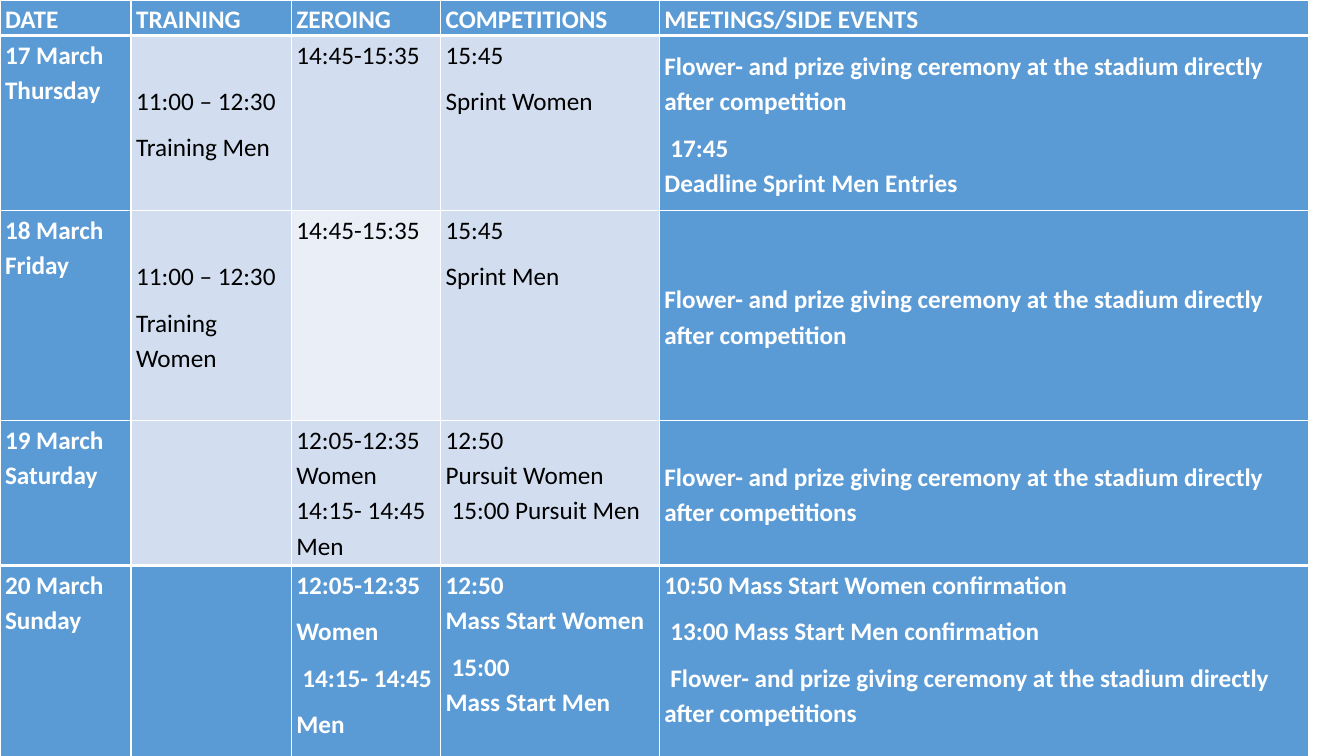
from lxml.etree import SubElement
from pptx import Presentation
from pptx.dml.color import RGBColor
from pptx.enum.text import MSO_ANCHOR
from pptx.oxml.ns import qn
from pptx.util import Inches, Pt

COLORS = {"white": "FFFFFF", "black": "000000", "blue": "5B9BD5",
          "light": "D2DEEF", "pale": "EAEFF7"}
COL_WIDTHS = [1.3, 1.59, 1.48, 2.17, 6.44]
ROW_HEIGHTS = [0.35, 1.74, 2.08, 1.44, 2.09]
CEREMONY = "Flower- and prize giving ceremony at the stadium directly after competition"

# Each cell is a list of paragraphs; a leading ">" indents the first line.
SCHEDULE = [
    [["DATE"], ["TRAINING"], ["ZEROING"], ["COMPETITIONS"], ["MEETINGS/SIDE EVENTS"]],
    [["17 March\nThursday"], ["11:00 – 12:30", "Training Men"], ["14:45-15:35"],
     ["15:45", "Sprint Women"],
     [CEREMONY, ">17:45\nDeadline Sprint Men Entries"]],
    [["18 March\nFriday"], ["11:00 – 12:30", "Training Women"], ["14:45-15:35"],
     ["15:45", "Sprint Men"], [CEREMONY]],
    [["19 March\nSaturday"], [], ["12:05-12:35", "Women", "14:15- 14:45", "Men"],
     ["12:50", "Pursuit Women", ">15:00 Pursuit Men"], [CEREMONY + "s"]],
    [["20 March\nSunday"], [], ["12:05-12:35", "Women", ">14:15- 14:45", "Men"],
     ["12:50\nMass Start Women", ">15:00\nMass Start Men"],
     ["10:50 Mass Start Women confirmation", ">13:00 Mass Start Men confirmation",
      ">" + CEREMONY + "s"]],
]
HEADER, SATURDAY, SUNDAY = 0, 3, 4
DATE, TRAINING, ZEROING, MEETINGS = 0, 1, 2, 4


def add_border(cell, side, points):
    tc_pr = cell._tc.get_or_add_tcPr()
    line = SubElement(tc_pr, qn(f"a:ln{side}"), w=str(Pt(points)))
    fill = SubElement(line, qn("a:solidFill"))
    SubElement(fill, qn("a:srgbClr"), val=COLORS["white"])


def write_paragraph(p, text, light, space_after):
    p.text = text.lstrip(">")
    p.line_spacing = 1.15
    p.space_after = Pt(space_after)
    if text.startswith(">"):
        p._p.get_or_add_pPr().set("indent", str(Inches(0.06)))
    for r in p.runs:
        r.font.name = "Calibri"
        r.font.size = Pt(18)
        r.font.bold = not light
        r.font.color.rgb = RGBColor.from_string(COLORS["black" if light else "white"])


prs = Presentation()
prs.slide_width, prs.slide_height = Inches(13.33), Inches(7.5)
s = prs.slides.add_slide(prs.slide_layouts[6])

table = s.shapes.add_table(
    len(ROW_HEIGHTS), len(COL_WIDTHS), 0, 0,
    Inches(sum(COL_WIDTHS)), Inches(sum(ROW_HEIGHTS))).table
for column, width in zip(table.columns, COL_WIDTHS):
    column.width = Inches(width)
for row, height in zip(table.rows, ROW_HEIGHTS):
    row.height = Inches(height)

for i, day in enumerate(SCHEDULE):
    for j, paragraphs in enumerate(day):
        cell = table.cell(i, j)
        light = HEADER < i < SUNDAY and DATE < j < MEETINGS
        fill = "light" if light else "blue"
        if (i, j) == (2, ZEROING):
            fill = "pale"

        add_border(cell, "L", 1)
        add_border(cell, "R", 1)
        add_border(cell, "T", 3 if i in (HEADER + 1, SUNDAY) else 1)
        add_border(cell, "B", 3 if i in (HEADER, SATURDAY) else 1)
        cell.fill.solid()
        cell.fill.fore_color.rgb = RGBColor.from_string(COLORS[fill])

        cell.margin_left = cell.margin_right = Inches(0.05)
        # Training times start one line below the date
        cell.margin_top = Inches(0.46 if light and j == TRAINING else 0)
        cell.margin_bottom = 0
        if j == MEETINGS and HEADER < i < SUNDAY:
            cell.vertical_anchor = MSO_ANCHOR.MIDDLE

        tf = cell.text_frame
        for k, text in enumerate(paragraphs):
            p = tf.add_paragraph() if k else tf.paragraphs[0]
            write_paragraph(p, text, light, 0 if light and i == SATURDAY else 8)

prs.save("out.pptx")
